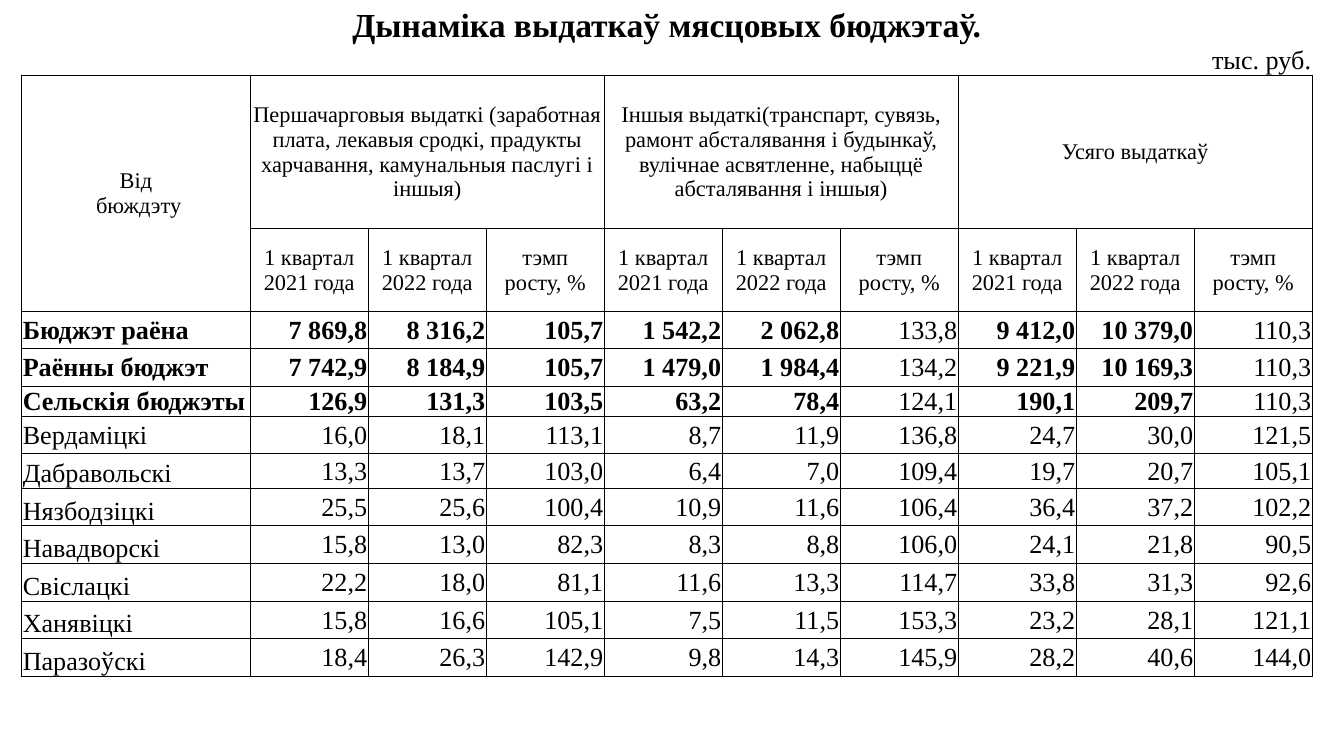
"""Builds a one-slide table of local budget spending by quarter."""
from dataclasses import dataclass

from lxml import etree
from pptx import Presentation
from pptx.dml.color import RGBColor
from pptx.enum import text as t
from pptx.oxml import ns
from pptx.util import Cm, Pt


@dataclass(frozen=True)
class Theme:
    font: str = "Times New Roman"
    ink: str = "000000"
    title: int = 18
    body: int = 14
    head: int = 12
    line: float = 0.5


THEME = Theme()
LEFT, CENTER, RIGHT = t.PP_ALIGN.LEFT, t.PP_ALIGN.CENTER, t.PP_ALIGN.RIGHT
MIDDLE, BOTTOM = t.MSO_ANCHOR.MIDDLE, t.MSO_ANCHOR.BOTTOM
COLS = [4.32] + [2.23] * 9
ROWS = [0.76, 0.58, 2.89, 1.57, 0.71, 0.71, 0.57, 0.71, 0.65] + [0.71] * 5
GROUPS = [
    "Першачарговыя выдаткі (заработная плата, лекавыя сродкі, прадукты харчавання, камунальныя паслугі і іншыя)",
    "Іншыя выдаткі(транспарт, сувязь, рамонт абсталявання і будынкаў, вулічнае асвятленне, набыццё абсталявання і іншыя)",
    "Усяго выдаткаў",
]
MEASURES = ["1 квартал 2021 года", "1 квартал 2022 года", "тэмп\nросту, %"]
BUDGETS = [
    "Бюджэт раёна|7 869,8|8 316,2|105,7|1 542,2|2 062,8|133,8|9 412,0|10 379,0|110,3",
    "Раённы бюджэт|7 742,9|8 184,9|105,7|1 479,0|1 984,4|134,2|9 221,9|10 169,3|110,3",
    "Сельскія бюджэты|126,9|131,3|103,5|63,2|78,4|124,1|190,1|209,7|110,3",
    "Вердаміцкі|16,0|18,1|113,1|8,7|11,9|136,8|24,7|30,0|121,5",
    "Дабравольскі|13,3|13,7|103,0|6,4|7,0|109,4|19,7|20,7|105,1",
    "Нязбодзіцкі|25,5|25,6|100,4|10,9|11,6|106,4|36,4|37,2|102,2",
    "Навадворскі|15,8|13,0|82,3|8,3|8,8|106,0|24,1|21,8|90,5",
    "Свіслацкі|22,2|18,0|81,1|11,6|13,3|114,7|33,8|31,3|92,6",
    "Ханявіцкі|15,8|16,6|105,1|7,5|11,5|153,3|23,2|28,1|121,1",
    "Паразоўскі|18,4|26,3|142,9|9,8|14,3|145,9|28,2|40,6|144,0",
]
HEAD_ROW, FIRST_BUDGET, TOTALS = 2, 4, 3
PLAIN_COLS = (6, 9)


def set_borders(cell, visible):
    """Draw the named sides (out of L, R, T, B) of a cell and hide the others."""
    tc_pr = cell._tc.get_or_add_tcPr()
    for side in "LRTB":
        ln = etree.SubElement(tc_pr, ns.qn(f"a:ln{side}"), w=str(Pt(THEME.line)))
        if side in visible:
            fill = etree.SubElement(ln, ns.qn("a:solidFill"))
            etree.SubElement(fill, ns.qn("a:srgbClr"), val=THEME.ink)
        else:
            etree.SubElement(ln, ns.qn("a:noFill"))


def format_cell(cell, visible):
    """Give a cell its borders, no fill, and tight margins."""
    set_borders(cell, visible)
    cell.fill.background()
    cell.margin_left = cell.margin_right = cell.margin_top = Cm(0.02)
    cell.margin_bottom = 0
    cell.text_frame.paragraphs[0].font.size = Pt(THEME.head)


def write_cell(cell, text, size, align, anchor=MIDDLE, bold=False):
    """Write text into a cell, one paragraph a line."""
    cell.text_frame.text = text
    cell.vertical_anchor = anchor
    for p in cell.text_frame.paragraphs:
        p.alignment = align
        p.font.name, p.font.size, p.font.bold = THEME.font, Pt(size), bold
        p.font.color.rgb = RGBColor.from_string(THEME.ink)


def add_grid(s):
    """Add the empty table with its sizes and borders."""
    tbl = s.shapes.add_table(len(ROWS), len(COLS), Cm(0.41), Cm(0.08),
                             Cm(sum(COLS)), Cm(sum(ROWS))).table
    tbl.first_row = tbl.horz_banding = False
    for col, width in zip(tbl.columns, COLS):
        col.width = Cm(width)
    for i, (row, height) in enumerate(zip(tbl.rows, ROWS)):
        row.height = Cm(height)
        for cell in row.cells:
            format_cell(cell, "LRTB" if i >= HEAD_ROW else "B" * i)
    return tbl


def write_headings(tbl):
    """Write the title, the unit and the two heading rows."""
    tbl.cell(0, 0).merge(tbl.cell(0, 9))
    write_cell(tbl.cell(0, 0), "Дынаміка выдаткаў мясцовых бюджэтаў.",
               THEME.title, CENTER, BOTTOM, True)
    for c in (1, 3, 5):
        tbl.cell(1, c).merge(tbl.cell(1, c + 1))
    write_cell(tbl.cell(1, 9), "тыс. руб.", THEME.body, RIGHT, BOTTOM)
    tbl.cell(HEAD_ROW, 0).merge(tbl.cell(HEAD_ROW + 1, 0))
    write_cell(tbl.cell(HEAD_ROW, 0), "Від\n бюждэту", THEME.head, CENTER)
    for g, group in enumerate(GROUPS):
        first = 1 + g * len(MEASURES)
        tbl.cell(HEAD_ROW, first).merge(tbl.cell(HEAD_ROW, first + 2))
        write_cell(tbl.cell(HEAD_ROW, first), group, THEME.head, CENTER)
        for m, measure in enumerate(MEASURES):
            write_cell(tbl.cell(HEAD_ROW + 1, first + m), measure, THEME.head, CENTER)


def write_budgets(tbl):
    """Write one row for each budget, with the totals in bold."""
    for i, line in enumerate(BUDGETS):
        for c, value in enumerate(line.split("|")):
            low = c == 0 and i > TOTALS
            write_cell(tbl.cell(FIRST_BUDGET + i, c), value, THEME.body,
                       RIGHT if c else LEFT, BOTTOM if low else MIDDLE,
                       i < TOTALS and c not in PLAIN_COLS)


def main():
    """Build and save the presentation."""
    prs = Presentation()
    prs.slide_width, prs.slide_height = Cm(25.4), Cm(14.29)
    s = prs.slides.add_slide(prs.slide_layouts[6])
    tbl = add_grid(s)
    write_headings(tbl)
    write_budgets(tbl)
    prs.save("out.pptx")


if __name__ == "__main__":
    main()
